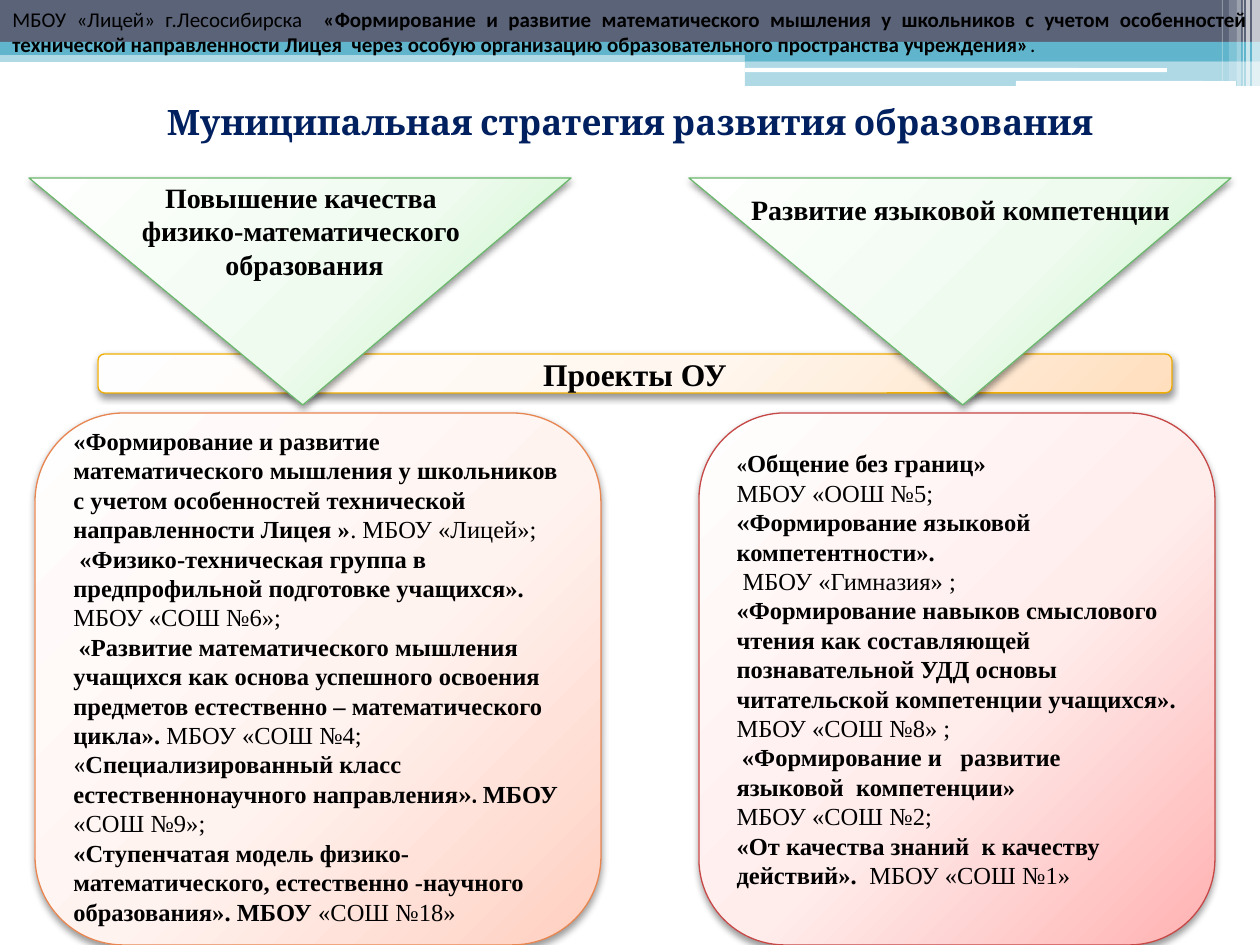
from lxml import etree
from pptx import Presentation
from pptx.dml.color import RGBColor
from pptx.enum.shapes import MSO_SHAPE
from pptx.enum.text import MSO_ANCHOR, MSO_AUTO_SIZE, PP_ALIGN
from pptx.oxml.ns import qn
from pptx.util import Pt

RECT, ROUND, TRIANGLE = MSO_SHAPE.RECTANGLE, MSO_SHAPE.ROUNDED_RECTANGLE, MSO_SHAPE.ISOSCELES_TRIANGLE
LEFT, CENTER, JUSTIFY = PP_ALIGN.LEFT, PP_ALIGN.CENTER, PP_ALIGN.JUSTIFY
TOP, MIDDLE = MSO_ANCHOR.TOP, MSO_ANCHOR.MIDDLE
PX = 914400 / 126
W, H = 1260, 945

THEME = {
    "slate": "5A6378", "teal": "60B5CC", "white": "FFFFFF",
    "green": ("6BB76D", "FEFFFE", "F0FBF0", "BFF2BF"),
    "amber": ("F0AD00", "FFFEFE", "FFF7EF", "FFDFBE"),
    "orange": ("E88651", "FFFEFE", "FFF3F0", "FFCFC0"),
    "red": ("C64847", "FFFEFE", "FFEDEC", "FFB1B1"),
    "text": {
        "title": ("Cambria", 20, True, "002060"),
        "bar": ("Times New Roman", 18, True, "000000"),
        "goal": ("Times New Roman", 16, True, "000000"),
        "bold": ("Times New Roman", 14, True, "000000"),
        "plain": ("Times New Roman", 14, False, "000000"),
        "small": ("Times New Roman", 12, True, "000000"),
        "mark": ("Cambria", 14, False, "000000"),
        "mark_bold": ("Cambria", 14, True, "000000"),
        "head": ("Calibri", 12, False, "000000"),
        "head_bold": ("Calibri", 12, True, "000000"),
    },
}

BANDS = [
    (RECT, 0, 50, W, 12, "teal", 50),
    (RECT, 0, 0, W, 42, "slate", 100),
    (RECT, 0, 42, W, 13, "teal", 100),
    (RECT, 745, 49, 515, 12, "teal", 100),
    (RECT, 745, 61, 515, 25, "teal", 50),
    (ROUND, 745, 68, 422, 4, "white", 100),
    (ROUND, 1016, 81, 220, 5, "white", 100),
]
STRIPES = [(1252, 8, 86, 65), (1246, 4, 86, 65), (1243, 1, 86, 60),
           (1237, 4, 86, 40), (1229, 8, 81, 20), (1222, 1, 81, 30)]

TITLE = [[("Муниципальная стратегия развития образования", "title")]]
BAR = [[("Проекты ОУ", "bar")]]
HEADER = [[
    ("МБОУ «Лицей» г.Лесосибирска ", "head"),
    (" «Формирование и развитие математического мышления у школьников с учетом особенностей "
     "технической направленности Лицея  через особую организацию образовательного пространства "
     "учреждения»", "head_bold"),
    (".", "head"),
]]
GOALS = [
    (29, (39, 174, 524, 115),
     ["Повышение качества", "физико-математического", " образования"]),
    (689, (725, 186, 471, 47), ["Развитие языковой компетенции"]),
]
PROJECTS = [
    (35, 566, "orange", 6, [
        [("«Формирование и развитие математического мышления у школьников с учетом особенностей "
          "технической направленности Лицея »", "bold"), (". МБОУ «Лицей»;", "plain")],
        [(" «Физико-техническая группа в предпрофильной подготовке учащихся». ", "bold"),
         ("МБОУ «СОШ №6»;", "plain")],
        [(" ", "mark_bold"),
         ("«Развитие математического мышления учащихся как основа успешного освоения предметов "
          "естественно – математического цикла». ", "bold"), ("МБОУ «СОШ №4;", "plain")],
        [("«", "mark"), ("Специализированный класс естественнонаучного направления", "bold"),
         ("». ", "mark_bold"), ("МБОУ ", "bold"), ("«СОШ №9»;", "plain")],
        [("«Ступенчатая модель физико-математического, естественно -научного образования». МБОУ ",
          "bold"), ("«СОШ №18»", "plain")],
    ]),
    (699, 516, "red", 20, [
        [("«", "small"), ("Общение без границ»", "bold")],
        [("МБОУ «ООШ №5;", "plain")],
        [("«", "mark_bold"), ("Формирование языковой компетентности».", "bold")],
        [(" ", "bold"), ("МБОУ «Гимназия» ;", "plain")],
        [("«Формирование навыков смыслового чтения как составляющей познавательной УДД основы "
          "читательской компетенции учащихся». ", "bold"), ("МБОУ «СОШ №8» ;", "plain")],
        [(" ", "mark_bold"), ("«Формирование и   развитие  языковой  компетенции»", "bold")],
        [("МБОУ «СОШ №2;", "plain")],
        [("«От качества знаний  к качеству действий».  ", "bold"), ("МБОУ «СОШ №1»", "plain")],
    ]),
]


def emu(*lengths):
    return [round(n * PX) for n in lengths]


def child(parent, tag, **attrs):
    return etree.SubElement(parent, qn(tag), {k: str(v) for k, v in attrs.items()})


def write(sp, paragraphs, align, anchor):
    tf = sp.text_frame
    tf.word_wrap = True
    tf.auto_size = MSO_AUTO_SIZE.NONE
    tf.vertical_anchor = anchor
    for i, runs in enumerate(paragraphs):
        p = tf.add_paragraph() if i else tf.paragraphs[0]
        p.alignment = align
        for text, style in runs:
            r = p.add_run()
            r.text = text
            name, size, bold, color = THEME["text"][style]
            r.font.name, r.font.size, r.font.bold = name, Pt(size), bold
            r.font.color.rgb = RGBColor.from_string(color)


def add_label(s, box, paragraphs, align, anchor):
    write(s.shapes.add_textbox(*emu(*box)), paragraphs, align, anchor)


def add_band(s, kind, x, y, w, h, color, opacity):
    sp = s.shapes.add_shape(kind, *emu(x, y, w, h))
    sp.shadow.inherit = False
    sp.line.fill.background()
    sp.fill.solid()
    sp.fill.fore_color.rgb = RGBColor.from_string(THEME[color])
    if opacity < 100:
        clr = sp._element.spPr.find(qn("a:solidFill"))[0]
        child(clr, "a:alpha", val=opacity * 1000)


def add_glow_shape(s, kind, box, palette):
    sp = s.shapes.add_shape(kind, *emu(*box))
    line, *stops = THEME[palette]
    sp.line.color.rgb = RGBColor.from_string(line)
    sp.line.width = Pt(0.75)
    sp.fill.gradient()
    grad = sp._element.spPr.find(qn("a:gradFill"))
    for old in list(grad):
        grad.remove(old)
    stop_list = child(grad, "a:gsLst")
    for pos, color in zip((0, 55, 100), stops):
        child(child(stop_list, "a:gs", pos=pos * 1000), "a:srgbClr", val=color)
    circle = child(grad, "a:path", path="circle")
    child(circle, "a:fillToRect", l=-40000, t=-90000, r=140000, b=190000)
    sp.shadow.inherit = False
    effects = sp._element.spPr.find(qn("a:effectLst"))
    shadow = child(effects, "a:outerShdw", blurRad=Pt(4.1), dist=Pt(2), dir=5400000, rotWithShape=0)
    child(child(shadow, "a:srgbClr", val="000000"), "a:alpha", val=40000)
    return sp


def main():
    prs = Presentation()
    prs.slide_width, prs.slide_height = emu(W, H)
    s = prs.slides.add_slide(prs.slide_layouts[5])
    for band in BANDS:
        add_band(s, *band)
    for x, w, h, opacity in STRIPES:
        add_band(s, RECT, x, 0, w, h, "white", opacity)

    bar = add_glow_shape(s, ROUND, (98, 354, 1074, 39), "amber")
    write(bar, BAR, CENTER, MIDDLE)
    title = s.shapes.title
    title.left, title.top, title.width, title.height = emu(0, 78, W, 88)
    write(title, TITLE, CENTER, MIDDLE)

    for x, box, lines in GOALS:
        sp = add_glow_shape(s, TRIANGLE, (x, 178, 542, 227), "green")
        sp.rotation = 180
        sp.adjustments[0] = 0.495
        add_label(s, box, [[(line, "goal")] for line in lines], CENTER, TOP)

    for x, w, palette, lift, paragraphs in PROJECTS:
        sp = add_glow_shape(s, ROUND, (x, 413, w, 532), palette)
        write(sp, paragraphs, LEFT, MIDDLE)
        sp.text_frame.margin_bottom += emu(lift)[0]

    add_label(s, (0, 0, W, 63), HEADER, JUSTIFY, MIDDLE)
    prs.save("out.pptx")


if __name__ == "__main__":
    main()
